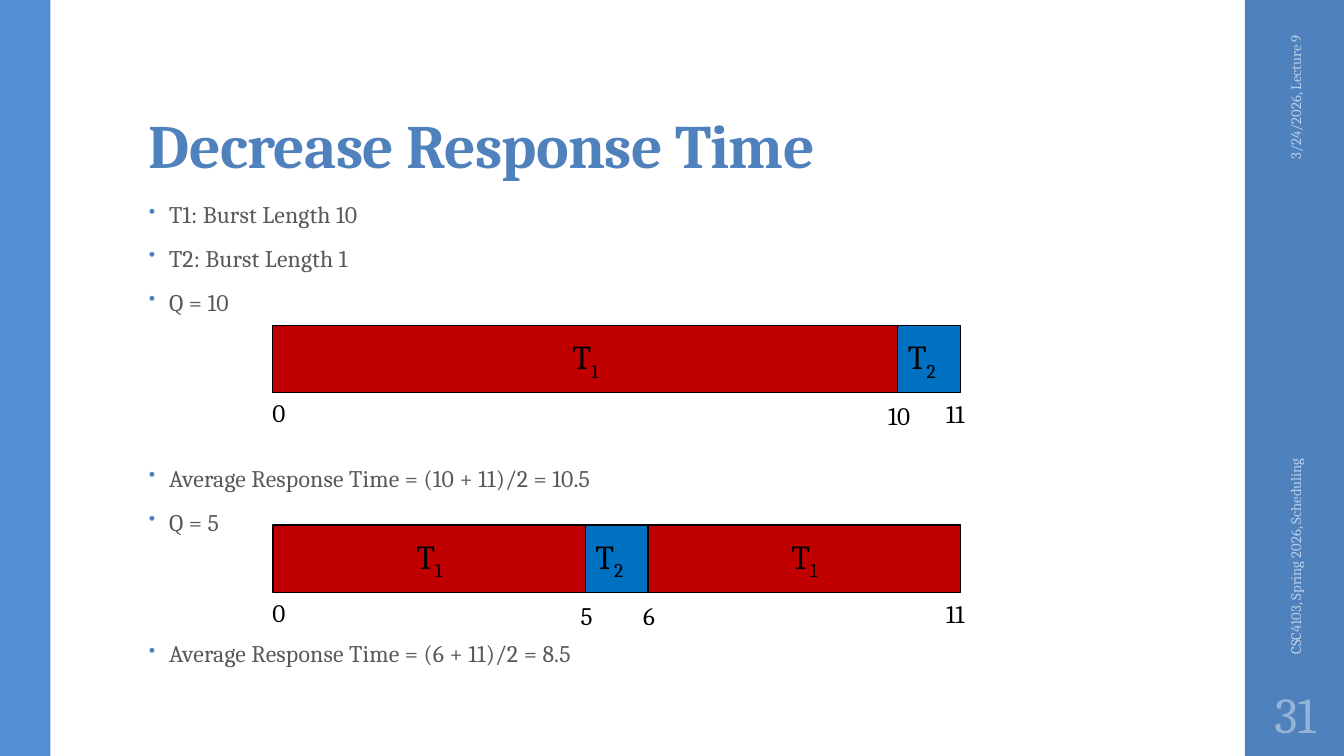
import pptx
import pptx.dml.color
import pptx.enum.shapes
import pptx.enum.text
import pptx.oxml
import pptx.oxml.ns
import pptx.util
from pptx.util import Cm

RGBColor = pptx.dml.color.RGBColor
ALIGN = pptx.enum.text.PP_ALIGN
ANCHOR = pptx.enum.text.MSO_ANCHOR

ACCENT = RGBColor(0x4F, 0x81, 0xBD)
LEFT_BAND = RGBColor(0x55, 0x8E, 0xD5)
BODY_GREY = RGBColor(0x59, 0x59, 0x59)
FOOTER_BLUE = RGBColor(0xB9, 0xCD, 0xE5)
NUMBER_BLUE = RGBColor(0x95, 0xB3, 0xD7)
BLACK = RGBColor(0, 0, 0)
TASK_COLORS = {"1": RGBColor(0xC0, 0, 0), "2": RGBColor(0, 0x70, 0xC0)}

CHART_LEFT = 6.88
TIME_UNIT = 1.575  # width of one time unit
BAR_HEIGHT = 1.7
LABEL_HEIGHT = 1.02
BULLET_GAP = 14
BULLET_PITCH = 31.43  # points from one bullet line to the next


class SchedulingSlide:
    font_name = "Cambria"

    def __init__(self, presentation):
        self.slide = presentation.slides.add_slide(presentation.slide_layouts[5])
        self.shapes = self.slide.shapes

    def style(self, paragraph, size, color, bold=False, spacing=0):
        font = paragraph.font
        font.name = self.font_name
        font.size = pptx.util.Pt(size)
        font.color.rgb = color
        font.bold = bold
        if spacing:
            font._element.set("spc", str(spacing))

    def title(self, text):
        heading = self.shapes.title
        heading.left, heading.top = Cm(3.5), Cm(0.81)
        heading.width, heading.height = Cm(26.92), Cm(3.89)
        frame = heading.text_frame
        frame.text = text
        frame.vertical_anchor = ANCHOR.BOTTOM
        frame.margin_top = Cm(0.08)
        frame.auto_size = pptx.enum.text.MSO_AUTO_SIZE.NONE
        paragraph = frame.paragraphs[0]
        paragraph.alignment = ALIGN.LEFT
        paragraph.line_spacing = 0.9
        self.style(paragraph, 44, ACCENT, bold=True, spacing=-50)

    def rectangle(self, left, top, width, height, color, parent=None):
        block = (parent or self.shapes).add_shape(
            pptx.enum.shapes.MSO_SHAPE.RECTANGLE,
            Cm(left), Cm(top), Cm(width), Cm(height))
        block.shadow.inherit = False
        block.fill.solid()
        block.fill.fore_color.rgb = color
        block.line.fill.background()
        return block

    def text(self, text, left, top, width, height, size, color,
             align=ALIGN.LEFT, rotation=0, wrap=True, parent=None):
        box = (parent or self.shapes).add_textbox(
            Cm(left), Cm(top), Cm(width), Cm(height))
        box.rotation = rotation
        frame = box.text_frame
        frame.word_wrap = wrap
        frame.vertical_anchor = ANCHOR.MIDDLE
        frame.text = text
        frame.paragraphs[0].alignment = align
        self.style(frame.paragraphs[0], size, color)

    def bullets(self, items):
        """Each item is its text and the number of lines left free above it."""
        box = self.shapes.add_textbox(Cm(3.5), Cm(5.08), Cm(23.88), Cm(12.09))
        frame = box.text_frame
        frame.word_wrap = True
        for index, (text, free_lines) in enumerate(items):
            paragraph = frame.add_paragraph() if index else frame.paragraphs[0]
            paragraph.text = text
            paragraph.line_spacing = 0.75
            paragraph.space_after = pptx.util.Pt(2)
            if index:
                paragraph.space_before = pptx.util.Pt(
                    BULLET_GAP + free_lines * BULLET_PITCH)
            properties = paragraph._p.get_or_add_pPr()
            properties.set("marL", str(Cm(0.51)))
            properties.set("indent", str(Cm(-0.51)))
            namespace = pptx.oxml.ns.nsdecls("a")
            for element in (
                    f'<a:buClr {namespace}><a:srgbClr val="{ACCENT}"/></a:buClr>',
                    f'<a:buSzPct {namespace} val="80000"/>',
                    f'<a:buChar {namespace} char="•"/>'):
                properties.append(pptx.oxml.parse_xml(element))
            self.style(paragraph, 17, BODY_GREY, spacing=10)

    def task(self, number, start, end, top, parent):
        block = self.rectangle(CHART_LEFT + start * TIME_UNIT, top,
                               (end - start) * TIME_UNIT, BAR_HEIGHT,
                               TASK_COLORS[number], parent)
        block.line.color.rgb = BLACK
        block.line.width = pptx.util.Pt(0.75)
        frame = block.text_frame
        frame.vertical_anchor = ANCHOR.MIDDLE
        paragraph = frame.paragraphs[0]
        paragraph.alignment = ALIGN.LEFT if end - start == 1 else ALIGN.CENTER
        paragraph.add_run().text = "T"
        subscript = paragraph.add_run()
        subscript.text = number
        subscript.font._element.set("baseline", "-25000")
        self.style(paragraph, 24, BLACK)

    def timeline(self, top, tasks):
        """Draw tasks (number, start, end) in a row with their times below."""
        parent = self.shapes.add_group_shape().shapes
        for number, start, end in tasks:
            self.task(number, start, end, top, parent)
        times = [tasks[0][1]] + [end for _, _, end in tasks]
        for time in times:
            shift, drop = {times[0]: (0.15, 1.69),
                           times[-1]: (-0.13, 1.72)}.get(time, (0.03, 1.76))
            width = 0.51 + 0.36 * len(str(time))
            center = CHART_LEFT + time * TIME_UNIT + shift
            self.text(str(time), center - width / 2, top + drop, width,
                      LABEL_HEIGHT, 18, BLACK, ALIGN.CENTER, wrap=False,
                      parent=parent)


def main():
    presentation = pptx.Presentation()
    presentation.slide_width = Cm(33.87)
    presentation.slide_height = Cm(19.05)
    page = SchedulingSlide(presentation)

    page.rectangle(31.37, 0, 2.5, 19.05, ACCENT)
    page.rectangle(0, 0, 1.27, 19.05, LEFT_BAND)
    page.title("Decrease Response Time")
    page.bullets([
        ("T1: Burst Length 10", 0),
        ("T2: Burst Length 1", 0),
        ("Q = 10", 0),
        ("Average Response Time = (10 + 11)/2 = 10.5", 3),
        ("Q = 5", 0),
        ("Average Response Time = (6 + 11)/2 = 8.5", 2),
    ])
    page.text("3/24/2026, Lecture 9", 30, 2.77, 5.28, 1.02, 10.5,
              FOOTER_BLUE, ALIGN.RIGHT, rotation=270)
    page.text("CSC4103, Spring 2026, Scheduling", 27.66, 11.25, 9.96, 1.02, 10.5,
              FOOTER_BLUE, rotation=270)
    page.text("31", 31.37, 17.15, 2.54, 1.65, 36, NUMBER_BLUE, ALIGN.CENTER)

    page.timeline(8.2, [("1", 0, 10), ("2", 10, 11)])
    page.timeline(13.23, [("1", 0, 5), ("2", 5, 6), ("1", 6, 11)])
    presentation.save("out.pptx")


if __name__ == "__main__":
    main()
